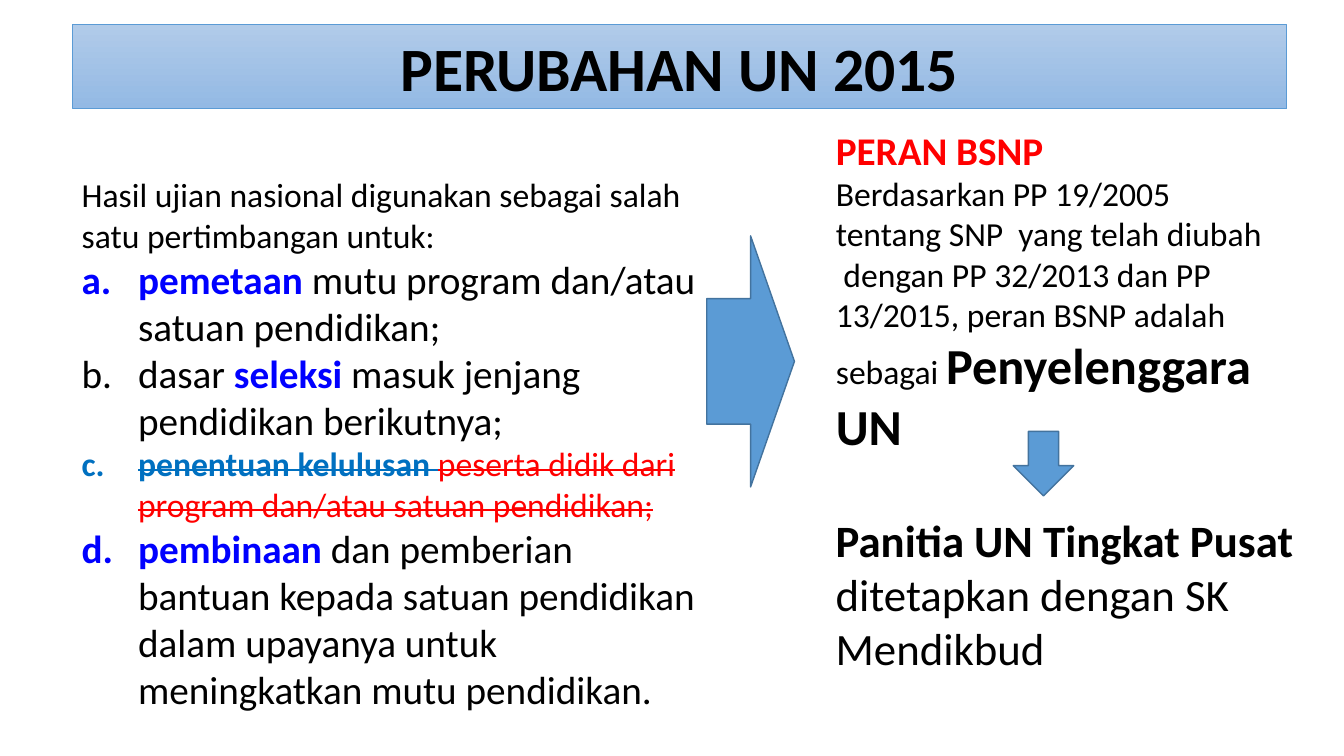
"""Builds the slide on the 2015 changes to the national exam (UN)."""
from lxml import etree
from pptx import Presentation
from pptx.dml.color import RGBColor
from pptx.enum.shapes import MSO_SHAPE
from pptx.enum.text import MSO_ANCHOR, MSO_AUTO_SIZE, PP_ALIGN
from pptx.oxml.ns import qn
from pptx.util import Inches, Pt

RIGHT_ARROW, DOWN_ARROW = MSO_SHAPE.RIGHT_ARROW, MSO_SHAPE.DOWN_ARROW
TOP, MIDDLE = MSO_ANCHOR.TOP, MSO_ANCHOR.MIDDLE
LEFT, CENTER = PP_ALIGN.LEFT, PP_ALIGN.CENTER
NO_AUTOFIT = MSO_AUTO_SIZE.NONE

FONT = "Calibri"
COLORS = {
    "text": "000000", "key": "0000FF", "dropped_key": "0070C0", "red": "FF0000",
    "arrow": "5B9BD5", "arrow_edge": "43739E",
    "banner_top": "B1CBE9", "banner_bottom": "93B9E4",
}

# Each run: text, size, colour, bold, struck through
TITLE = [[("PERUBAHAN UN 2015", 44, "text", True, False)]]
PURPOSE_INTRO = [
    ("Hasil ujian nasional digunakan sebagai salah satu pertimbangan untuk:", 24, "text", False, False),
]
PURPOSES = [
    [("pemetaan ", 28, "key", True, False),
     ("mutu program dan/atau satuan pendidikan;", 28, "text", False, False)],
    [("dasar", 28, "text", False, False),
     (" seleksi ", 28, "key", True, False),
     ("masuk jenjang pendidikan berikutnya;", 28, "text", False, False)],
    [("penentuan kelulusan ", 24, "dropped_key", True, True),
     ("peserta didik dari program dan/atau satuan pendidikan;", 24, "red", False, True)],
    [("pembinaan ", 28, "key", True, False),
     ("dan pemberian bantuan kepada satuan pendidikan dalam upayanya untuk "
      "meningkatkan mutu pendidikan.", 28, "text", False, False)],
]
ROLE = [
    [("PERAN BSNP", 28, "red", True, False)],
    [("Berdasarkan PP 19/2005 tentang SNP  yang telah diubah  dengan PP 32/2013 "
      "dan PP 13/2015, peran BSNP adalah sebagai ", 24, "text", False, False),
     ("Penyelenggara", 36, "text", True, False),
     (" ", 24, "text", True, False),
     ("UN", 36, "text", True, False)],
]
COMMITTEE = [
    [("Panitia UN Tingkat Pusat ", 32, "text", True, False),
     ("ditetapkan dengan SK Mendikbud", 32, "text", False, False)],
]

BANNER_BOX = (0.72, 0.24, 12.04, 0.84)
PURPOSE_BOX = (0.71, 1.68, 6.29, 5.6)
ROLE_BOX = (8.19, 1.2, 4.43, 3.4)
COMMITTEE_BOX = (8.19, 5.04, 5.1, 1.72)
ARROWS = [(RIGHT_ARROW, (7.01, 2.34, 0.87, 2.49)), (DOWN_ARROW, (10.05, 4.28, 0.6, 0.64))]
LIST_INDENT = Inches(0.56)


def color(name):
    return RGBColor.from_string(COLORS[name])


def place(holder, box):
    holder.left, holder.top, holder.width, holder.height = map(Inches, box)


def write(holder, paragraphs, align=LEFT, anchor=TOP, numbered_from=None):
    frame = holder.text_frame
    frame.word_wrap = True
    frame.auto_size = NO_AUTOFIT
    frame.vertical_anchor = anchor
    for index, runs in enumerate(paragraphs):
        paragraph = frame.add_paragraph() if index else frame.paragraphs[0]
        paragraph.alignment = align
        paragraph.space_before = Pt(0)
        numbered = numbered_from is not None and index >= numbered_from
        properties = paragraph._p.get_or_add_pPr()
        indent = LIST_INDENT if numbered else 0
        properties.set("marL", str(indent))
        properties.set("indent", str(-indent))
        if numbered:
            etree.SubElement(properties, qn("a:buAutoNum"), type="alphaLcPeriod")
        else:
            etree.SubElement(properties, qn("a:buNone"))
        for text, size, color_name, bold, struck in runs:
            run = paragraph.add_run()
            run.text = text
            run.font.name = FONT
            run.font.size = Pt(size)
            run.font.bold = bold
            run.font.color.rgb = color(color_name)
            if struck:
                run._r.get_or_add_rPr().set("strike", "sngStrike")


def main():
    deck = Presentation()
    deck.slide_width, deck.slide_height = Inches(13.33), Inches(7.5)
    slide = deck.slides.add_slide(deck.slide_layouts.get_by_name("Two Content"))
    banner, purposes, role = slide.placeholders

    place(banner, BANNER_BOX)
    write(banner, TITLE, CENTER, MIDDLE)
    banner.fill.gradient()
    banner.fill.gradient_angle = 270
    stops = banner.fill.gradient_stops
    for stop, position, name in zip(stops, (0, 1), ("banner_top", "banner_bottom")):
        stop.position = position
        stop.color.rgb = color(name)
    banner.line.color.rgb = color("arrow")
    banner.line.width = Pt(0.5)

    place(purposes, PURPOSE_BOX)
    write(purposes, [PURPOSE_INTRO] + PURPOSES, numbered_from=1)
    place(role, ROLE_BOX)
    write(role, ROLE)
    committee = slide.shapes.add_textbox(*map(Inches, COMMITTEE_BOX))
    write(committee, COMMITTEE)

    for kind, box in ARROWS:
        arrow = slide.shapes.add_shape(kind, *map(Inches, box))
        arrow.shadow.inherit = False
        arrow.fill.solid()
        arrow.fill.fore_color.rgb = color("arrow")
        arrow.line.color.rgb = color("arrow_edge")
        arrow.line.width = Pt(1)

    deck.save("out.pptx")


if __name__ == "__main__":
    main()
